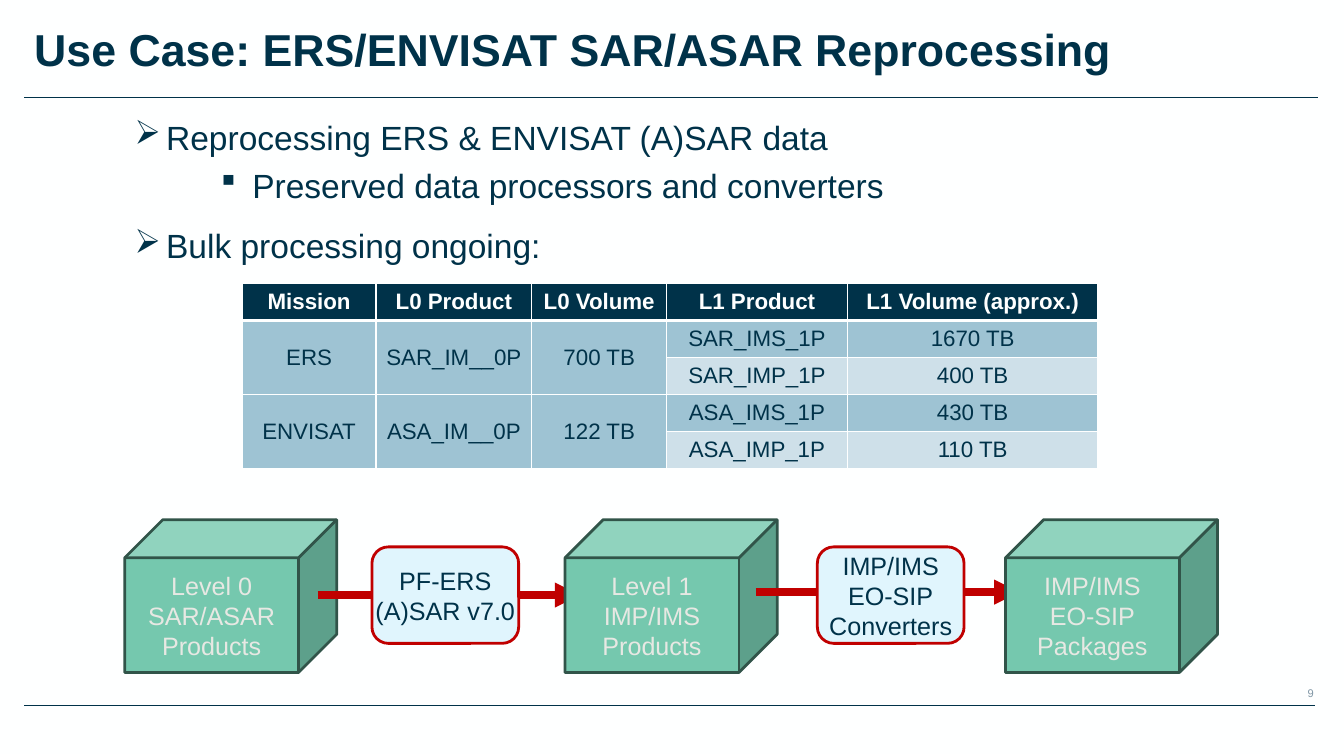
from lxml import etree
from pptx import Presentation
from pptx.dml.color import RGBColor
from pptx.enum.shapes import MSO_CONNECTOR, MSO_SHAPE
from pptx.enum.text import MSO_ANCHOR, MSO_AUTO_SIZE, PP_ALIGN
from pptx.oxml.ns import qn
from pptx.util import Pt

LEFT, CENTER, RIGHT = PP_ALIGN.LEFT, PP_ALIGN.CENTER, PP_ALIGN.RIGHT
TOP, MIDDLE = MSO_ANCHOR.TOP, MSO_ANCHOR.MIDDLE
CUBE, ROUNDED = MSO_SHAPE.CUBE, MSO_SHAPE.ROUNDED_RECTANGLE
STRAIGHT = MSO_CONNECTOR.STRAIGHT
NO_AUTOFIT = MSO_AUTO_SIZE.NONE

COLORS = {
    "paper": "FEFFFF", "navy": "003249", "number": "8197A6",
    "band_dark": "9EC3D3", "band_light": "CEE0E9",
    "product": "75C8AE", "product_edge": "315449", "product_text": "E7E8E3",
    "step": "E0F5FD", "red": "C00000",
}


def rgb(name):
    return RGBColor.from_string(COLORS[name])


class SlideBuilder:
    font = "Arial"

    def __init__(self, slide):
        self.slide = slide
        fill = slide.background.fill
        fill.solid()
        fill.fore_color.rgb = rgb("paper")

    def add_text(self, paragraph, text, size, color, align=LEFT, bold=False):
        paragraph.alignment = align
        for number, line in enumerate(text.split("\n")):
            if number:
                paragraph.add_line_break()
            run = paragraph.add_run()
            run.text = line
            run.font.name, run.font.size, run.font.bold = self.font, Pt(size), bold
            run.font.color.rgb = rgb(color)

    def frame(self, shape, anchor, margins=(7.2, 3.6, 7.2, 3.6), wrap=True):
        frame = shape.text_frame
        frame.auto_size = NO_AUTOFIT
        frame.word_wrap = wrap
        frame.vertical_anchor = anchor
        (frame.margin_left, frame.margin_top,
         frame.margin_right, frame.margin_bottom) = map(Pt, margins)
        return frame

    def place(self, shape, left, top, width, height):
        shape.left, shape.top = Pt(left), Pt(top)
        shape.width, shape.height = Pt(width), Pt(height)

    def title(self, text, *box):
        title = self.slide.shapes.title
        self.place(title, *box)
        self.add_text(self.frame(title, MIDDLE).paragraphs[0], text, 32, "navy", bold=True)

    def bullets(self, items, *box):
        body = self.slide.placeholders[1]
        self.place(body, *box)
        frame = self.frame(body, TOP)
        for number, (text, level, indent, mark, spacing, before) in enumerate(items):
            paragraph = frame.add_paragraph() if number else frame.paragraphs[0]
            paragraph.level = level
            paragraph.line_spacing = spacing
            paragraph.space_before, paragraph.space_after = Pt(before), Pt(0)
            props = paragraph._p.get_or_add_pPr()
            props.set("marL", str(Pt(indent)))
            props.set("indent", str(Pt(-22.5)))
            color = etree.SubElement(props, qn("a:buClr"))
            etree.SubElement(color, qn("a:srgbClr"), val=COLORS["navy"])
            etree.SubElement(props, qn("a:buFont"), typeface="Wingdings")
            etree.SubElement(props, qn("a:buChar"), char=mark)
            self.add_text(paragraph, text, 24, "navy")

    def line(self, x1, y1, x2, y2, color, width, arrow=False):
        line = self.slide.shapes.add_connector(STRAIGHT, Pt(x1), Pt(y1), Pt(x2), Pt(y2))
        line.line.color.rgb = rgb(color)
        line.line.width = Pt(width)
        if arrow:
            etree.SubElement(line.line._get_or_add_ln(), qn("a:tailEnd"), type="triangle")
        etree.SubElement(line._element.spPr, qn("a:effectLst"))

    def block(self, kind, text, box, fill, edge, text_color, adjust):
        block = self.slide.shapes.add_shape(kind, *map(Pt, box))
        block.shadow.inherit = False
        block.adjustments[0] = adjust
        block.fill.solid()
        block.fill.fore_color.rgb = rgb(fill)
        block.line.color.rgb = rgb(edge)
        block.line.width = Pt(2)
        frame = self.frame(block, MIDDLE, (0, 0, 0, 0), wrap=False)
        self.add_text(frame.paragraphs[0], text, 18, text_color, CENTER)

    def label(self, text, box, size, color, align):
        label = self.slide.shapes.add_textbox(*map(Pt, box))
        frame = self.frame(label, TOP, (7.2, 3.6, 0, 3.6))
        self.add_text(frame.paragraphs[0], text, size, color, align)

    def cell(self, cell, text, fill, color, bold, borders):
        cell.vertical_anchor = MIDDLE
        cell.margin_left = cell.margin_right = Pt(3.6)
        cell.margin_top = cell.margin_bottom = Pt(3.6)
        cell.fill.solid()
        cell.fill.fore_color.rgb = rgb(fill)
        props = cell._tc.get_or_add_tcPr()
        for position, (side, width) in enumerate(borders.items()):
            border = etree.Element(qn(f"a:ln{side}"), w=str(Pt(width)))
            paint = etree.SubElement(border, qn("a:solidFill"))
            etree.SubElement(paint, qn("a:srgbClr"), val=COLORS["paper"])
            props.insert(position, border)
        if text:
            self.add_text(cell.text_frame.paragraphs[0], text, 16, color, CENTER, bold)

    def table(self, rows, widths, row_height, left, top, merged_columns):
        table = self.slide.shapes.add_table(
            len(rows), len(widths), Pt(left), Pt(top),
            Pt(sum(widths)), Pt(row_height * len(rows))).table
        for column, width in zip(table.columns, widths):
            column.width = Pt(width)
        for r, values in enumerate(rows):
            table.rows[r].height = Pt(row_height)
            header = r == 0
            borders = {"L": 1, "R": 1, "T": 3 if r == 1 else 1, "B": 3 if header else 1}
            band = "navy" if header else "band_dark" if r % 2 else "band_light"
            for c, text in enumerate(values):
                fill = "band_dark" if c < merged_columns and not header else band
                self.cell(table.cell(r, c), text, fill,
                          "paper" if header else "navy", header, borders)
        for r in range(1, len(rows), 2):
            for c in range(merged_columns):
                table.cell(r, c).merge(table.cell(r + 1, c))


def main():
    prs = Presentation()
    prs.slide_width, prs.slide_height = Pt(962.6), Pt(540)
    page = SlideBuilder(prs.slides.add_slide(prs.slide_layouts[1]))

    # Page frame
    page.label("9", (645.8, 488.2, 295.2, 17.3), 8, "number", RIGHT)
    page.line(17.3, 505.4, 941.8, 505.4, "navy", 0.75)
    page.line(17.3, 69.8, 943.9, 69.8, "navy", 0.75)

    # Heading and key points
    page.title("Use Case: ERS/ENVISAT SAR/ASAR Reprocessing", 17.3, 11.5, 796.3, 46)
    page.bullets([
        ("Reprocessing ERS & ENVISAT (A)SAR data", 0, 22.5, "Ø", 1, 0),
        ("Preserved data processors and converters", 1, 84.2, "§", 1.19, 0),
        ("Bulk processing ongoing:", 0, 22.5, "Ø", 1.19, 9),
    ], 89.3, 80, 658.8, 131)

    # Processing chain: products joined by processing steps
    products = ["Level 0\nSAR/ASAR\nProducts", "Level 1\nIMP/IMS\nProducts",
                "IMP/IMS\nEO-SIP\nPackages"]
    steps = [("PF-ERS\n(A)SAR v7.0", 266.4, 227.5, 415.4, 426.2),
             ("IMP/IMS\nEO-SIP\nConverters", 585.4, 541.4, 730.1, 424.1)]
    for number, product in enumerate(products):
        page.block(CUBE, product, (89.3 + 315.4 * number, 372.2, 151.9, 109.4),
                   "product", "product_edge", "product_text", 0.25)
        if number < len(steps):
            step, left, start, end, level = steps[number]
            page.line(start, level, end, level, "red", 6, arrow=True)
            page.block(ROUNDED, step, (left, 391.7, 105.1, 69.1),
                       "step", "red", "navy", 0.17)

    # Data volumes
    page.table([
        ("Mission", "L0 Product", "L0 Volume", "L1 Product", "L1 Volume (approx.)"),
        ("ERS", "SAR_IM__0P", "700 TB", "SAR_IMS_1P", "1670 TB"),
        ("", "", "", "SAR_IMP_1P", "400 TB"),
        ("ENVISAT", "ASA_IM__0P", "122 TB", "ASA_IMS_1P", "430 TB"),
        ("", "", "", "ASA_IMP_1P", "110 TB"),
    ], [95.8, 111.6, 96.5, 129.6, 179.3], 26.5, 173.5, 203, merged_columns=3)

    prs.save("out.pptx")


if __name__ == "__main__":
    main()
